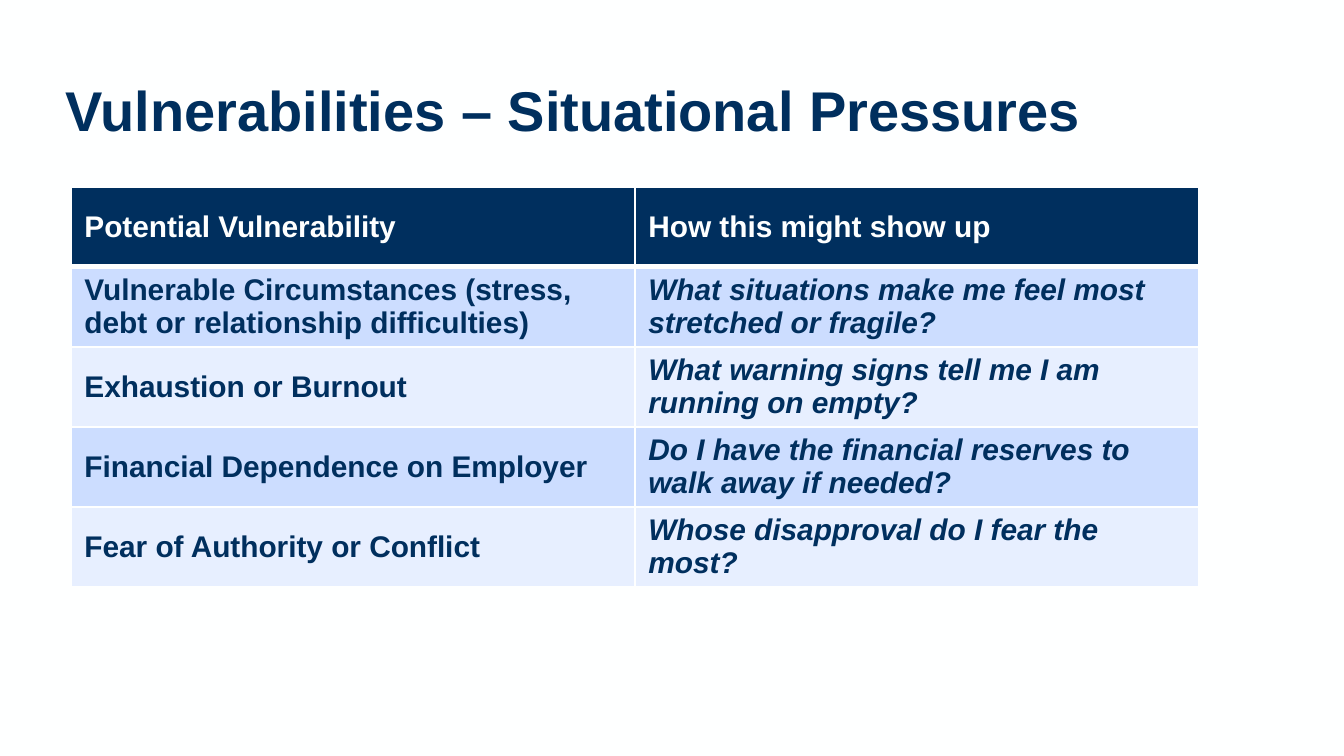
from lxml import etree
from pptx import Presentation
from pptx.dml.color import RGBColor
from pptx.enum.text import MSO_ANCHOR, PP_ALIGN
from pptx.oxml.ns import qn
from pptx.util import Emu, Pt

MIDDLE = MSO_ANCHOR.MIDDLE
LEFT = PP_ALIGN.LEFT
PX = 914400 / 134.4
TITLE_ONLY = 5

COLORS = {
    "paper": "FEFFFF",
    "navy": "002F5E",
    "band_dark": "CCDDFF",
    "band_light": "E7EFFF",
}

ROWS = [
    ("Potential Vulnerability", "How this might show up"),
    ("Vulnerable Circumstances (stress, debt or relationship difficulties)",
     "What situations make me feel most stretched or fragile?"),
    ("Exhaustion or Burnout",
     "What warning signs tell me I am running on empty?"),
    ("Financial Dependence on Employer",
     "Do I have the financial reserves to walk away if needed?"),
    ("Fear of Authority or Conflict",
     "Whose disapproval do I fear the most?"),
]


def px(value):
    return Emu(round(value * PX))


def color(name):
    return RGBColor.from_string(COLORS[name])


class SlideBuilder:
    """Holds the text style and the slide being built."""

    def __init__(self, slide):
        self.slide = slide
        self.style = {"name": "Arial", "bold": True}

    def background(self, name):
        fill = self.slide.background.fill
        fill.solid()
        fill.fore_color.rgb = color(name)

    def add_text(self, frame, text, color_name, **formats):
        para = frame.paragraphs[0]
        para.alignment = LEFT
        span = para.add_run()
        span.text = text
        for key, value in {**self.style, **formats}.items():
            setattr(span.font, key, value)
        span.font.color.rgb = color(color_name)
        return para

    def title(self, text, left, top, width, height):
        box = self.slide.shapes.title
        box.left, box.top, box.width, box.height = map(px, (left, top, width, height))
        box.text_frame.vertical_anchor = MIDDLE
        para = self.add_text(box.text_frame, text, "navy", size=Pt(30))
        para.line_spacing = Pt(31)

    def border(self, cell, side, points):
        properties = cell._tc.get_or_add_tcPr()
        line = etree.SubElement(properties, qn("a:" + side), w=str(Pt(points)))
        fill = etree.SubElement(line, qn("a:solidFill"))
        etree.SubElement(fill, qn("a:srgbClr"), val=COLORS["paper"])

    def cell(self, cell, text, row, column):
        header = row == 0
        cell.vertical_anchor = MIDDLE
        # Borders come before the fill in the cell properties
        for side in ("lnL", "lnR", "lnT", "lnB"):
            thick = (row, side) in ((0, "lnB"), (1, "lnT"))
            self.border(cell, side, 3 if thick else 1)
        band = "navy" if header else "band_dark" if row % 2 else "band_light"
        cell.fill.solid()
        cell.fill.fore_color.rgb = color(band)
        self.add_text(cell.text_frame, text, "paper" if header else "navy",
                      size=Pt(16), italic=not header and column == 1)

    def table(self, rows, left, top, column_width, row_height):
        count = len(rows[0])
        frame = self.slide.shapes.add_table(
            len(rows), count, px(left), px(top),
            px(column_width * count), px(row_height * len(rows)))
        table = frame.table
        for column in table.columns:
            column.width = px(column_width)
        for row, texts in enumerate(rows):
            table.rows[row].height = px(row_height)
            for column, text in enumerate(texts):
                self.cell(table.cell(row, column), text, row, column)


def main():
    deck = Presentation()
    deck.slide_width, deck.slide_height = px(1344), px(756)
    page = SlideBuilder(deck.slides.add_slide(deck.slide_layouts[TITLE_ONLY]))
    page.background("paper")

    # Heading
    page.title("Vulnerabilities – Situational Pressures", 52, 40, 1251, 147)

    # Vulnerabilities and how they show up
    page.table(ROWS, 71, 187, 564, 80)

    deck.save("out.pptx")


if __name__ == "__main__":
    main()
